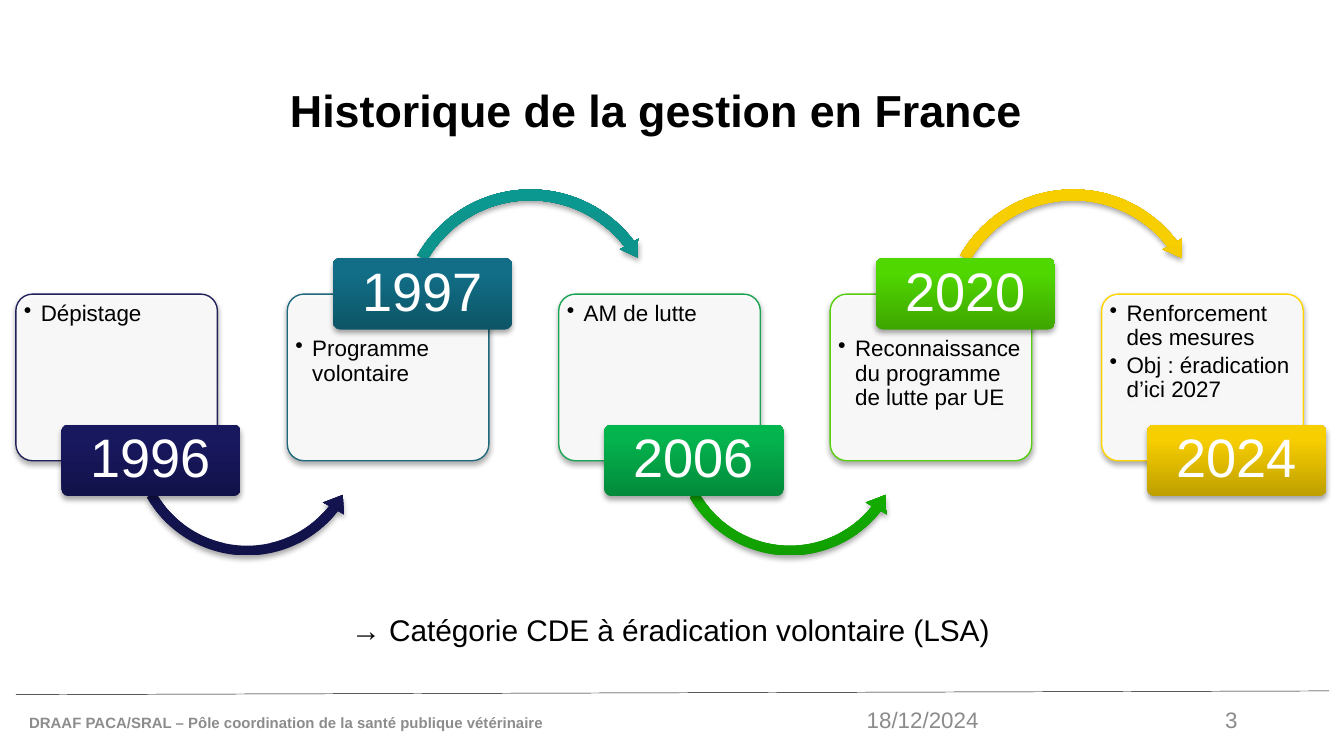
from copy import deepcopy
from dataclasses import dataclass

from pptx import Presentation
from pptx.dml.color import RGBColor
from pptx.enum.shapes import MSO_CONNECTOR, MSO_SHAPE as Shape
from pptx.enum.text import MSO_ANCHOR as Anchor, PP_ALIGN as Align
from pptx.oxml.ns import qn
from pptx.oxml.xmlchemy import OxmlElement
from pptx.util import Cm, Pt

BLACK = RGBColor(0x00, 0x00, 0x00)
WHITE = RGBColor(0xFF, 0xFF, 0xFF)
GREY = RGBColor(0x8C, 0x8C, 0x8C)


def shades(*codes):
    """Return the dark, middle and light colours of a gradient."""
    return tuple(RGBColor.from_string(code) for code in codes)


NAVY = shades("12124A", "18185F", "161661")
BLUE = shades("0D5567", "116E86", "0F7089")
TEAL = shades("0A726D", "0D948D", "0B9890")
GREEN = shades("038A3B", "04B34D", "01B74D")
LEAF = shades("119D00", "16CC00", "17CD00")
LIME = shades("3EA600", "50D700", "51D800")
GOLD = shades("BE9F00", "F7CE00", "F8CF00")
NAVY_EDGE, BLUE_EDGE, GREEN_EDGE, LIME_EDGE, GOLD_EDGE = shades(
    "21215A", "1F697D", "19A453", "57CF0F", "FFD500")


@dataclass
class Step:
    """One dated step of the timeline."""
    year: str
    points: list
    edge: RGBColor
    badge: tuple
    arrow: tuple = None


STEPS = [
    Step("1996", ["Dépistage"], NAVY_EDGE, NAVY, NAVY),
    Step("1997", ["Programme volontaire"], BLUE_EDGE, BLUE, TEAL),
    Step("2006", ["AM de lutte"], GREEN_EDGE, GREEN, LEAF),
    Step("2020", ["Reconnaissance du programme de lutte par UE"], LIME_EDGE, LIME, GOLD),
    Step("2024", ["Renforcement des mesures", "Obj : éradication d’ici 2027"], GOLD_EDGE, GOLD),
]
LEFT, PITCH = 0.3, 5.13


def add_child(parent, tag, **attributes):
    """Append a DrawingML element and return it."""
    child = OxmlElement(tag)
    for name, value in attributes.items():
        child.set(name, str(value))
    parent.append(child)
    return child


def style_text(para, size, color, bold=False, spacing=None):
    """Set the font and line spacing of a paragraph."""
    para.font.name = "Arial"
    para.font.size = Pt(size)
    para.font.bold = bold
    para.font.color.rgb = color
    if spacing:
        para.line_spacing = spacing


def add_text(page, place, text, size, color=BLACK, bold=False,
             align=Align.LEFT, anchor=Anchor.MIDDLE, spacing=None):
    """Add a text box with one paragraph."""
    frame = page.shapes.add_textbox(*map(Cm, place)).text_frame
    frame.word_wrap = True
    frame.vertical_anchor = anchor
    para = frame.paragraphs[0]
    para.text = text
    para.alignment = align
    style_text(para, size, color, bold, spacing)


def add_shadowed(page, kind, place, adjustments):
    """Add a preset shape with a soft shadow below it."""
    shape = page.shapes.add_shape(kind, *map(Cm, place))
    for index, value in enumerate(adjustments):
        shape.adjustments[index] = value
    shape.shadow.inherit = False
    effects = shape._element.spPr.find(qn("a:effectLst"))
    shadow = add_child(effects, "a:outerShdw", blurRad=Pt(3.1), dist=Pt(1.8),
                       dir=5400000, rotWithShape=0)
    add_child(add_child(shadow, "a:srgbClr", val=BLACK), "a:alpha", val=35000)
    return shape


def fill_gradient(shape, colors):
    """Fill a shape upwards from dark to light, without outline."""
    shape.line.fill.background()
    shape.fill.gradient()
    shape.fill.gradient_angle = 90
    stops = shape._element.spPr.find(".//" + qn("a:gsLst"))
    stops.append(deepcopy(stops[-1]))
    for stop, position, color in zip(shape.fill.gradient_stops, (0, 0.8, 1), colors):
        stop.position = position
        stop.color.rgb = color


def add_card(page, left, step, raised):
    """Add the outlined card with its bulleted points."""
    card = add_shadowed(page, Shape.ROUNDED_RECTANGLE, (left, 5.56, 3.81, 3.15), [0.1])
    card.fill.solid()
    card.fill.fore_color.rgb = WHITE
    add_child(card._element.spPr.find(".//" + qn("a:srgbClr")), "a:alpha", val=90000)
    card.line.color.rgb = step.edge
    card.line.width = Pt(0.75)
    frame = card.text_frame
    frame.word_wrap = True
    frame.vertical_anchor = Anchor.TOP
    frame.margin_left = frame.margin_right = frame.margin_bottom = Cm(0.06)
    frame.margin_top = Cm(0.73 if raised else 0.06)
    frame.text = "\n".join(step.points)
    for para in frame.paragraphs:
        properties = para._p.get_or_add_pPr()
        properties.set("marL", str(Cm(0.32)))
        properties.set("indent", str(-Cm(0.32)))
        add_child(properties, "a:buChar", char="•")
        para.alignment = Align.LEFT
        para.space_after = Pt(1.8)
        style_text(para, 12, BLACK, spacing=0.9)


def add_arrow(page, left, colors, raised):
    """Add the curved arrow that leads to the next step."""
    if raised:
        arrow = add_shadowed(page, Shape.CIRCULAR_ARROW, (left + 2.04, 3.48, 5.11, 5.11),
                             [0.04, 4.59, 193.65, 125.75, 0.04])
    else:
        arrow = add_shadowed(page, Shape.LEFT_CIRCULAR_ARROW, (left + 2.06, 6.02, 4.62, 4.62),
                             [0.04, 5.12, 22.88, 90.25, 0.05])
    fill_gradient(arrow, colors)


def add_badge(page, left, step, raised):
    """Add the coloured badge with the year."""
    top = 4.88 if raised else 8.03
    badge = add_shadowed(page, Shape.ROUNDED_RECTANGLE, (left + 0.86, top, 3.39, 1.35), [0.1])
    fill_gradient(badge, step.badge)
    frame = badge.text_frame
    frame.margin_left = frame.margin_right = Cm(0.15)
    frame.margin_top = frame.margin_bottom = Cm(0.1)
    frame.vertical_anchor = Anchor.MIDDLE
    para = frame.paragraphs[0]
    para.text = step.year
    para.alignment = Align.CENTER
    style_text(para, 29, WHITE, spacing=0.9)


def add_rule(page):
    """Add the thin line above the footer."""
    rule = page.shapes.add_connector(MSO_CONNECTOR.STRAIGHT,
                                     Cm(0.3), Cm(13.13), Cm(25.12), Cm(13.06))
    rule.line.color.rgb = BLACK
    rule.line.width = Pt(0.25)
    add_child(rule._element.spPr, "a:effectLst")


def main():
    """Build the timeline slide and save it."""
    deck = Presentation()
    deck.slide_width, deck.slide_height = Cm(25.4), Cm(14.29)
    page = deck.slides.add_slide(deck.slide_layouts[6])
    add_rule(page)
    add_text(page, (0.3, 13.28, 10.49, 0.76),
             "DRAAF PACA/SRAL – Pôle coordination de la santé publique vétérinaire",
             8, GREY, bold=True)
    add_text(page, (22.07, 13.23, 1.57, 0.76), "3", 12, GREY, align=Align.RIGHT)
    add_text(page, (5.23, 0.76, 18.42, 2.77), "Historique de la gestion en France",
             24, bold=True, spacing=0.9)
    add_text(page, (16.13, 13.23, 2.77, 0.76), "18/12/2024", 12, GREY)
    for index, step in enumerate(STEPS):
        left, raised = LEFT + index * PITCH, index % 2 == 1
        add_card(page, left, step, raised)
        if step.arrow:
            add_arrow(page, left, step.arrow, raised)
        add_badge(page, left, step, raised)
    add_text(page, (6.02, 11.56, 13.31, 0.81), "→ Catégorie CDE à éradication volontaire (LSA)",
             16, align=Align.CENTER, anchor=Anchor.TOP, spacing=0.8)
    deck.save("out.pptx")


if __name__ == "__main__":
    main()
